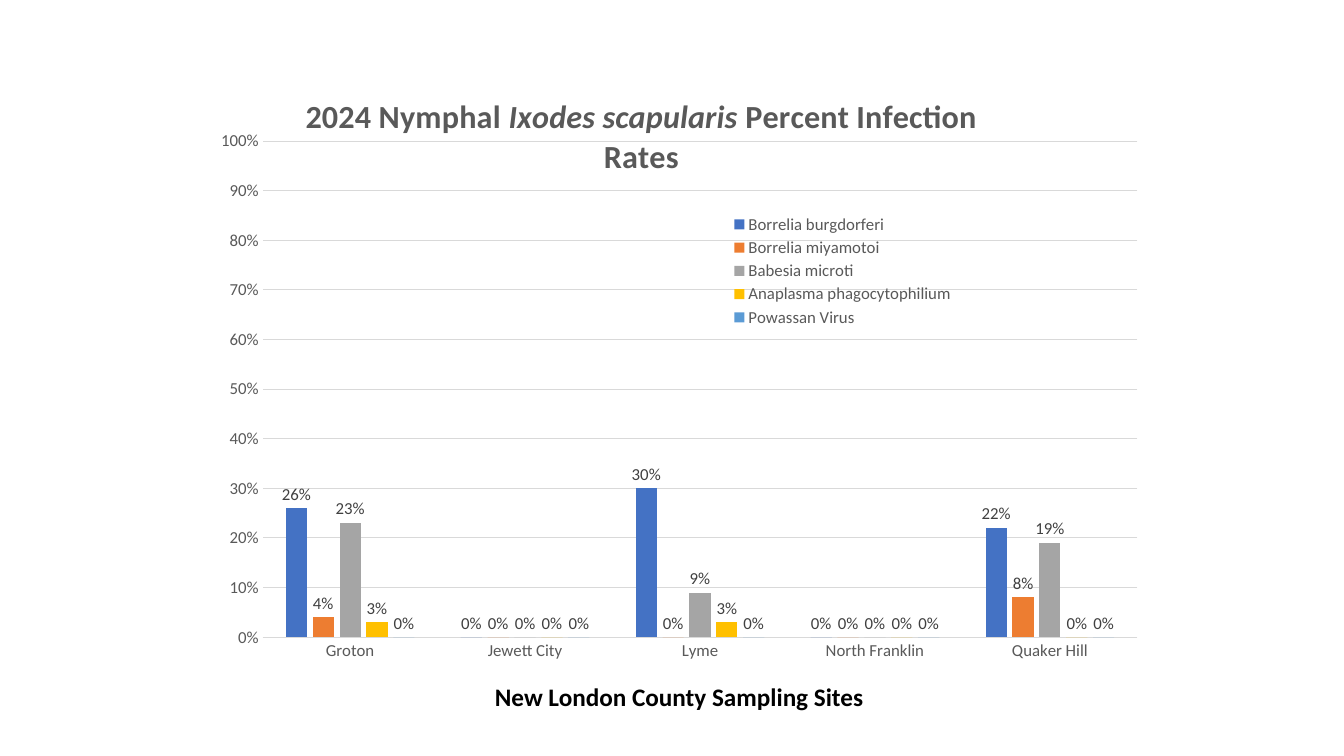
from lxml import etree
from pptx import Presentation
from pptx.chart.data import CategoryChartData
from pptx.dml.color import RGBColor
from pptx.enum.chart import XL_CHART_TYPE, XL_LABEL_POSITION, XL_LEGEND_POSITION, XL_TICK_MARK
from pptx.enum.text import MSO_ANCHOR, PP_ALIGN
from pptx.oxml.ns import qn
from pptx.util import Inches, Pt

COLUMNS = XL_CHART_TYPE.COLUMN_CLUSTERED
OUTSIDE = XL_LABEL_POSITION.OUTSIDE_END
RIGHT = XL_LEGEND_POSITION.RIGHT
NO_TICK = XL_TICK_MARK.NONE

FONT = "Calibri"
COLORS = {"black": "000000", "text": "595959", "label": "404040", "grid": "D9D9D9"}
SITES = ["Groton", "Jewett City", "Lyme", "North Franklin", "Quaker Hill"]
PATHOGENS = [
    ("Borrelia burgdorferi", "4472C4", (0.26, 0, 0.3, 0, 0.22)),
    ("Borrelia miyamotoi", "ED7D31", (0.04, 0, 0, 0, 0.08)),
    ("Babesia microti", "A5A5A5", (0.23, 0, 0.09, 0, 0.19)),
    ("Anaplasma phagocytophilium", "FFC000", (0.03, 0, 0.03, 0, 0)),
    ("Powassan Virus", "5B9BD5", (0, 0, 0, 0, 0)),
]
TITLE_LINES = [
    [("2024 Nymphal ", False), ("Ixodes scapularis", True), (" Percent Infection", False)],
    [("Rates", False)],
]


def style_font(font, size, color, bold=False):
    font.name, font.size, font.bold = FONT, Pt(size), bold
    font.color.rgb = RGBColor.from_string(COLORS[color])


def style_line(line):
    line.color.rgb = RGBColor.from_string(COLORS["grid"])
    line.width = Pt(0.75)


def set_layout(parent, index, **shares):
    """Place a chart part by shares of the chart's size; index is its slot in the parent."""
    for old in parent.findall(qn("c:layout")):
        parent.remove(old)
    layout = etree.Element(qn("c:layout"))
    manual = etree.SubElement(layout, qn("c:manualLayout"))
    if parent.tag == qn("c:plotArea"):
        etree.SubElement(manual, qn("c:layoutTarget"), val="inner")
    for side in ("x", "y"):
        etree.SubElement(manual, qn(f"c:{side}Mode"), val="edge")
    for name, share in shares.items():
        etree.SubElement(manual, qn(f"c:{name}"), val=str(share))
    parent.insert(index, layout)


def add_title(chart):
    title = chart.chart_title
    frame = title.text_frame
    for number, line in enumerate(TITLE_LINES):
        para = frame.add_paragraph() if number else frame.paragraphs[0]
        para.alignment = PP_ALIGN.CENTER
        style_font(para.font, 23, "text", True)
        for text, italic in line:
            span = para.add_run()
            span.text = text
            style_font(span.font, 23, "text", True)
            span.font.italic = italic
    title.include_in_layout = False
    set_layout(title._element, 1, x=0.1, y=0.02)


def style_axes(chart):
    sites, rates = chart.category_axis, chart.value_axis
    for axis in (sites, rates):
        axis.major_tick_mark = axis.minor_tick_mark = NO_TICK
        style_font(axis.tick_labels.font, 12, "text")
    style_line(sites.format.line)
    rates.format.line.fill.background()
    rates.minimum_scale, rates.maximum_scale, rates.major_unit = 0, 1, 0.1
    rates.tick_labels.number_format = "0%"
    rates.tick_labels.number_format_is_linked = False
    style_line(rates.major_gridlines.format.line)


def style_columns(plot):
    plot.gap_width, plot.overlap, plot.vary_by_categories = 219, -27, False
    for series, (_, color, _) in zip(plot.series, PATHOGENS):
        series.format.fill.solid()
        series.format.fill.fore_color.rgb = RGBColor.from_string(color)
        labels = series.data_labels
        labels.show_value = True
        labels.position = OUTSIDE
        labels.number_format, labels.number_format_is_linked = "0%", False
        style_font(labels.font, 12, "label")


def add_infection_chart(page, left, top, width, height):
    rates = CategoryChartData(number_format="0%")
    rates.categories = SITES
    for name, _, values in PATHOGENS:
        rates.add_series(name, values)
    chart = page.shapes.add_chart(COLUMNS, left, top, width, height, rates).chart
    style_font(chart.font, 10, "black")
    add_title(chart)
    style_axes(chart)
    style_columns(chart.plots[0])
    set_layout(chart._chartSpace.chart.plotArea, 0, x=0.058, y=0.103, w=0.923, h=0.83)

    chart.has_legend = True
    legend = chart.legend
    legend.position, legend.include_in_layout = RIGHT, False
    style_font(legend.font, 12, "text")
    set_layout(legend._element, 1, x=0.54, y=0.22, w=0.26, h=0.2)


def add_caption(page, left, top, width, height):
    frame = page.shapes.add_textbox(left, top, width, height).text_frame
    frame.word_wrap = False
    frame.vertical_anchor = MSO_ANCHOR.TOP
    para = frame.paragraphs[0]
    para.text = "New London County Sampling Sites"
    style_font(para.font, 18, "black", True)


def main():
    deck = Presentation()
    deck.slide_width, deck.slide_height = Inches(13.33), Inches(7.5)
    page = deck.slides.add_slide(deck.slide_layouts[6])
    add_infection_chart(page, Inches(2.06), Inches(0.79), Inches(9.4), Inches(5.93))
    add_caption(page, Inches(4.81), Inches(6.71), Inches(3.89), Inches(0.4))
    deck.save("out.pptx")


if __name__ == "__main__":
    main()
